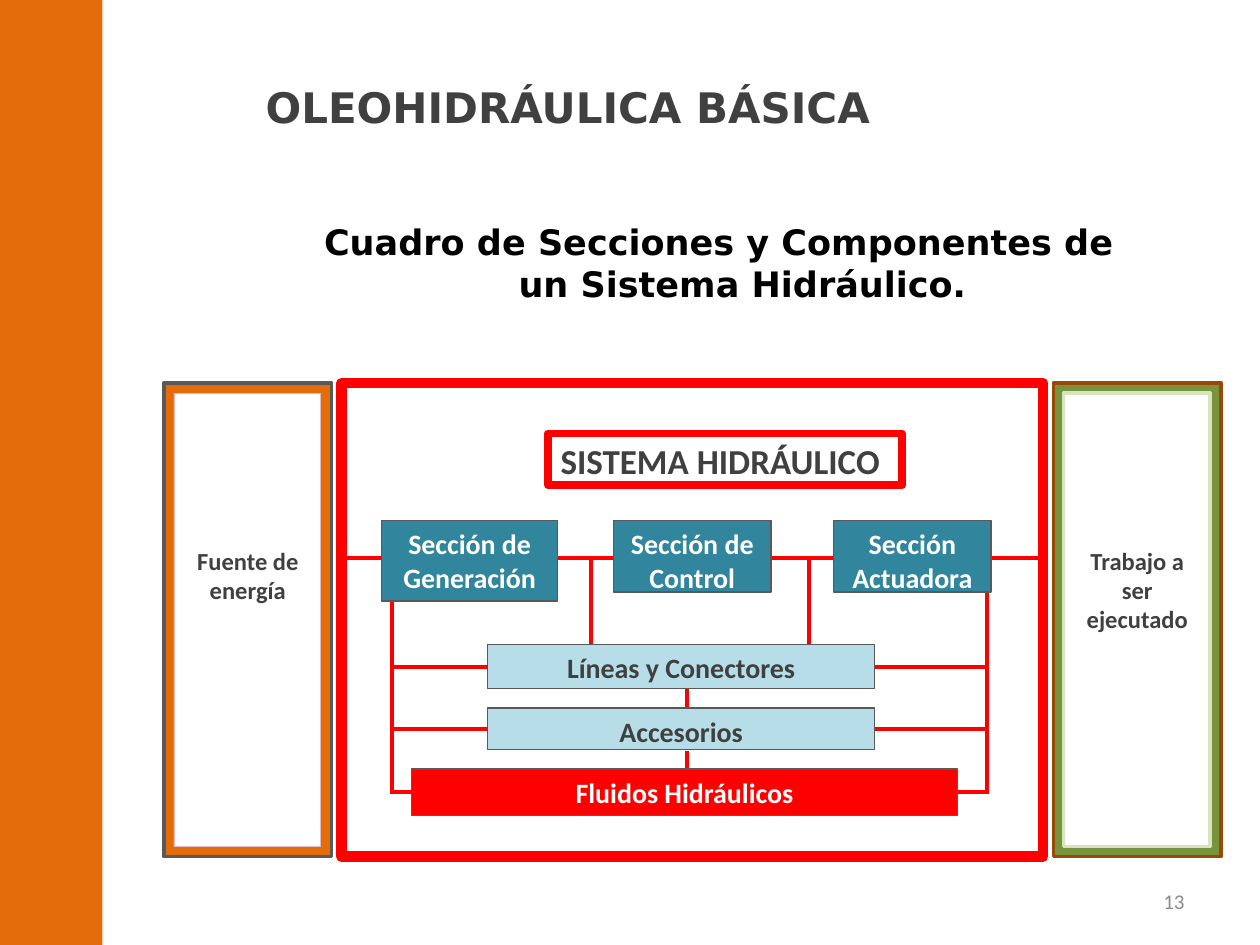
import pptx
import pptx.util
import pptx.dml.color
import pptx.enum.shapes
import pptx.enum.text
from lxml import etree

Pt = pptx.util.Pt
RGB = pptx.dml.color.RGBColor
ALIGN = pptx.enum.text.PP_ALIGN
ANCHOR = pptx.enum.text.MSO_ANCHOR
RECT = pptx.enum.shapes.MSO_SHAPE.RECTANGLE
STRAIGHT = pptx.enum.shapes.MSO_CONNECTOR.STRAIGHT

ORANGE = RGB(0xE4, 0x6C, 0x0A)
BROWN = RGB(0x98, 0x48, 0x07)
GREEN = RGB(0x77, 0x93, 0x3C)
LIME = RGB(0xD7, 0xE4, 0xBD)
PINK = RGB(0xE6, 0xB9, 0xB8)
RED = RGB(0xFF, 0x00, 0x00)
TEAL = RGB(0x31, 0x85, 0x9C)
SKY = RGB(0xB7, 0xDE, 0xE8)
WHITE = RGB(0xFF, 0xFF, 0xFF)
BLACK = RGB(0x00, 0x00, 0x00)
DARK = RGB(0x40, 0x40, 0x40)
EDGE = RGB(0x59, 0x59, 0x59)
GRAY = RGB(0x8C, 0x8C, 0x8C)

LEFT, RIGHT = 1, 3  # connection sites of a rectangle


def write(shape, text, size=16, color=DARK, font="Calibri", bold=True,
          align=ALIGN.CENTER, anchor=ANCHOR.TOP, hang=0):
    """Fill a shape with text, one paragraph per line; hang is in points."""
    frame = shape.text_frame
    frame.word_wrap = True
    frame.vertical_anchor = anchor
    frame.text = text
    for para in frame.paragraphs:
        para.alignment = align
        if hang:
            props = para._p.get_or_add_pPr()
            props.set("marL", str(int(Pt(hang))))
            props.set("indent", str(-int(Pt(hang))))
        para.font.name = font
        para.font.size = Pt(size)
        para.font.bold = bold
        para.font.color.rgb = color


class Board:
    def __init__(self, slide, wire=RED, width=2.25):
        self.shapes = slide.shapes
        self.wire = wire
        self.width = width

    def rect(self, x, y, w, h, fill, line=None, width=0.75):
        box = self.shapes.add_shape(RECT, Pt(x), Pt(y), Pt(w), Pt(h))
        box.shadow.inherit = False
        box.fill.solid()
        box.fill.fore_color.rgb = fill
        if line is None:
            box.line.fill.background()
        else:
            box.line.color.rgb = line
            box.line.width = Pt(width)
        return box

    def label(self, x, y, w, h, text, **style):
        box = self.shapes.add_textbox(Pt(x), Pt(y), Pt(w), Pt(h))
        write(box, text, **style)

    def link(self, x1, y1, x2, y2):
        line = self.shapes.add_connector(STRAIGHT, Pt(x1), Pt(y1), Pt(x2), Pt(y2))
        line.line.color.rgb = self.wire
        line.line.width = Pt(self.width)
        etree.SubElement(line._element.spPr, pptx.oxml.ns.qn("a:effectLst"))
        return line


def main():
    deck = pptx.Presentation()
    deck.slide_width, deck.slide_height = Pt(720), Pt(540)
    board = Board(deck.slides.add_slide(deck.slide_layouts[6]))

    board.rect(-1.5, 0, 60, 540, ORANGE)
    board.label(144.7, 43.2, 436.3, 36, "OLEOHIDRÁULICA BÁSICA",
                size=24, font="DejaVu Sans", align=ALIGN.LEFT)
    board.label(161.3, 122.4, 499, 77.8,
                "Cuadro de Secciones y Componentes de un Sistema Hidráulico.",
                size=20, font="DejaVu Sans", color=BLACK, hang=27)
    board.label(516.2, 500.4, 167.8, 28.8, "13", size=12, color=GRAY,
                bold=False, align=ALIGN.RIGHT, anchor=ANCHOR.MIDDLE)

    # Side panels: a coloured frame around a white sheet
    top, high, inset = 218.9, 270.7, 5.8
    panels = [
        (93.6, ORANGE, EDGE, PINK, 0.25, "Fuente de\nenergía"),
        (601.9, GREEN, BROWN, LIME, 2, "Trabajo a ser ejecutado"),
    ]
    for x, fill, edge, trim, width, text in panels:
        board.rect(x, top, 95.8, high, fill, edge, 2)
        board.rect(x + inset, top + inset, 83.9, high - 2 * inset, WHITE, trim, width)
        board.label(x + 4.5, 308.2, 87, 36.7, text, size=14)

    board.rect(195.1, top, 401, high, WHITE, RED, 6)
    head = board.rect(313.2, 247.7, 202.3, 29.5, WHITE, RED, 4.5)
    write(head, "SISTEMA HIDRÁULICO", size=20, align=ALIGN.LEFT)

    # Wiring: one bus, two rails and the drops between the boxes
    bus, west, east, mid = 319, 224, 563.8, 392.4
    board.link(195.1, bus, 598, bus)
    for x, y1, y2 in [
        (west, bus, 453.6), (east, bus, 453.6),
        (337.7, bus, 369), (462.2, bus, 369),
        (mid, 392, 405), (mid, 429, 439.2),
    ]:
        board.link(x, y1, x, y2)

    sections = [
        (218, 100.8, 46, "Sección de Generación"),
        (350.6, 90, 41, "Sección de Control"),
        (476.4, 90, 41, "Sección Actuadora"),
    ]
    for x, w, h, text in sections:
        write(board.rect(x, 297.4, w, h, TEAL, EDGE), text, color=WHITE)

    parts = [
        (278.8, 368.4, 221, 25.2, SKY, DARK, "Líneas y Conectores"),
        (278.8, 404.6, 221, 23.6, SKY, DARK, "Accesorios"),
        (235.2, 439.4, 312, 26.6, RED, WHITE, "Fluidos Hidráulicos"),
    ]
    for x, y, w, h, fill, color, text in parts:
        box = board.rect(x, y, w, h, fill, EDGE)
        write(box, text, color=color)
        level = y + h / 2
        for rail, side, end in [(west, LEFT, x), (east, RIGHT, x + w)]:
            board.link(rail, level, end, level).end_connect(box, side)

    deck.save("out.pptx")


if __name__ == "__main__":
    main()
